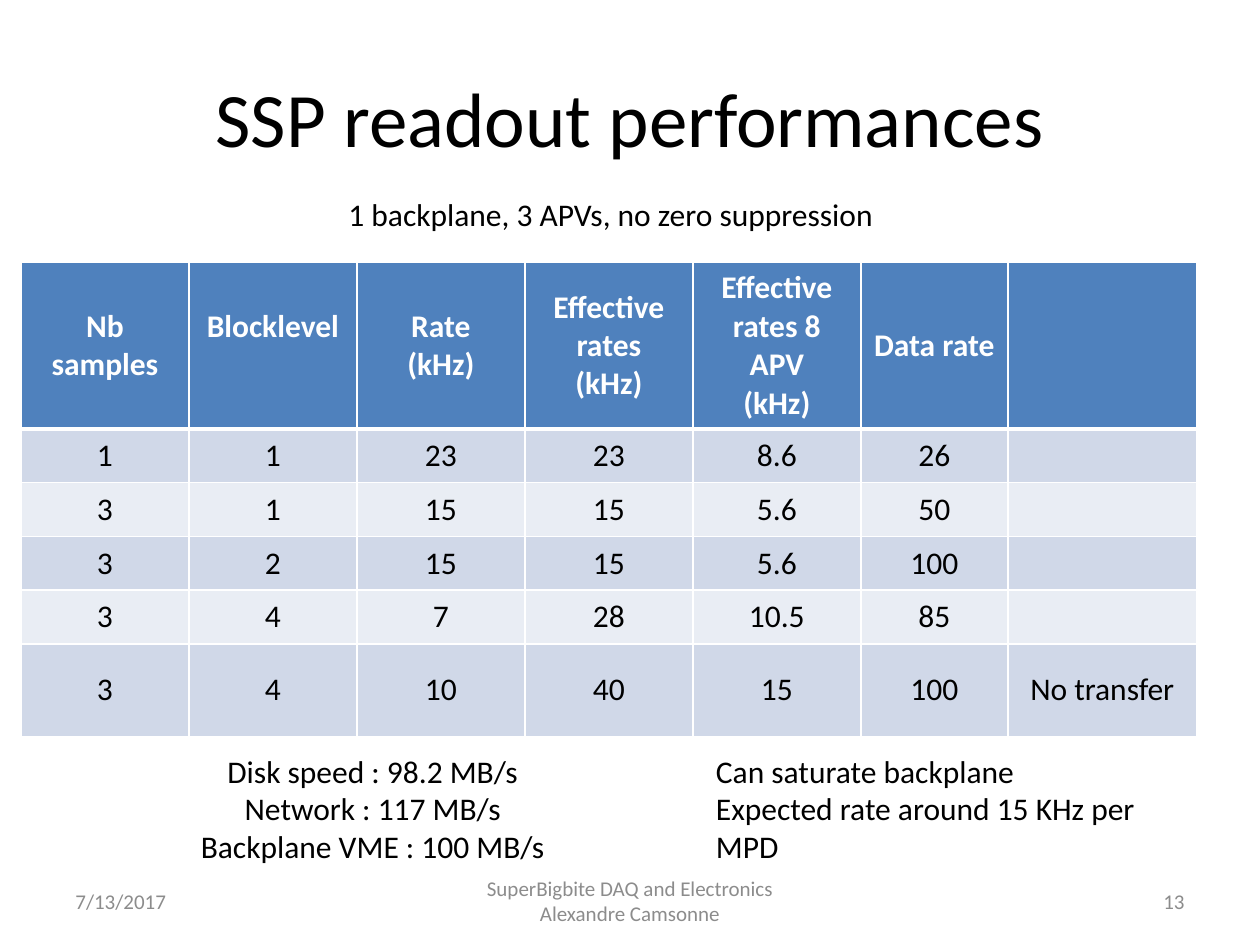
from lxml.etree import SubElement
from pptx import Presentation
from pptx.dml.color import RGBColor
from pptx.enum.text import MSO_ANCHOR, MSO_AUTO_SIZE, PP_ALIGN
from pptx.oxml.ns import qn
from pptx.util import Pt

FONT = "Calibri"
BLACK = RGBColor(0, 0, 0)
WHITE = RGBColor(255, 255, 255)
GRAY = RGBColor(0x8C, 0x8C, 0x8C)
BLUE = RGBColor(0x4F, 0x81, 0xBD)
BANDS = [RGBColor(0xD0, 0xD8, 0xE8), RGBColor(0xE9, 0xED, 0xF4)]
LEFT, CENTER, RIGHT = PP_ALIGN.LEFT, PP_ALIGN.CENTER, PP_ALIGN.RIGHT

# Content
TITLE = "SSP readout performances"
HEADER = ["Nb samples", "Blocklevel", "Rate\n(kHz)", "Effective rates\n(kHz)",
          "Effective rates 8 APV\n(kHz)", "Data rate", ""]
ROWS = [
    ["1", "1", "23", "23", "8.6", "26", ""],
    ["3", "1", "15", "15", "5.6", "50", ""],
    ["3", "2", "15", "15", "5.6", "100", ""],
    ["3", "4", "7", "28", "10.5", "85", ""],
    ["3", "4", "10", "40", "15", "100", "No transfer"],
]
COL_WIDTHS = [96] * 5 + [84, 108]
ROW_HEIGHTS = [75.6] + [30.7] * 4 + [53]
TABLE_LEFT, TABLE_TOP, TABLE_HEIGHT = 12, 150, 269.3

# Text, (left, top, width, height), alignment, wrap
NOTES = [
    ("1 backplane, 3 APVs, no zero suppression", (192, 108, 318, 29), LEFT, False),
    ("Disk speed : 98.2 MB/s\nNetwork : 117 MB/s\nBackplane VME : 100 MB/s",
     (96, 426, 234, 72.7), CENTER, True),
    ("Can saturate backplane\nExpected rate around 15 KHz per MPD",
     (402, 426, 276, 72.7), LEFT, True),
]
# Text, left, width, alignment
FOOTERS = [
    ("7/13/2017", 36, 168, LEFT),
    ("SuperBigbite DAQ and Electronics Alexandre Camsonne", 246, 228, CENTER),
    ("13", 516, 168, RIGHT),
]


def set_text(tf, text, size=18, color=BLACK, bold=False, align=LEFT):
    for i, line in enumerate(text.split("\n")):
        p = tf.add_paragraph() if i else tf.paragraphs[0]
        p.alignment = align
        r = p.add_run()
        r.text = line
        r.font.name, r.font.size, r.font.bold = FONT, Pt(size), bold
        r.font.color.rgb = color


def add_text(s, text, box, wrap=True, anchor=MSO_ANCHOR.TOP, grow=False, **fmt):
    tf = s.shapes.add_textbox(*map(Pt, box)).text_frame
    tf.word_wrap = wrap
    tf.vertical_anchor = anchor
    tf.auto_size = MSO_AUTO_SIZE.SHAPE_TO_FIT_TEXT if grow else MSO_AUTO_SIZE.NONE
    set_text(tf, text, **fmt)


def set_borders(cell, **widths):
    tcPr = cell._tc.get_or_add_tcPr()
    for side, width in widths.items():
        ln = SubElement(tcPr, qn(f"a:ln{side}"), w=str(Pt(width)))
        SubElement(SubElement(ln, qn("a:solidFill")), qn("a:srgbClr"), val=str(WHITE))


def add_rates_table(s):
    data = [HEADER] + ROWS
    frame = s.shapes.add_table(len(data), len(HEADER), Pt(TABLE_LEFT), Pt(TABLE_TOP),
                               Pt(sum(COL_WIDTHS)), Pt(TABLE_HEIGHT))
    table = frame.table
    for col, width in zip(table.columns, COL_WIDTHS):
        col.width = Pt(width)
    for row, height in zip(table.rows, ROW_HEIGHTS):
        row.height = Pt(height)
    frame.height = Pt(TABLE_HEIGHT)

    for i, values in enumerate(data):
        head = i == 0
        for j, text in enumerate(values):
            cell = table.cell(i, j)
            cell.vertical_anchor = MSO_ANCHOR.MIDDLE
            set_borders(cell, L=1, R=1, T=3 if i == 1 else 1, B=3 if head else 1)
            cell.fill.solid()
            cell.fill.fore_color.rgb = BLUE if head else BANDS[(i - 1) % 2]
            if text:
                set_text(cell.text_frame, text, color=WHITE if head else BLACK,
                         bold=head, align=CENTER)
    # Lift the one-line heading level with the first line of its neighbours
    table.cell(0, HEADER.index("Blocklevel")).margin_bottom = Pt(25.6)


def main():
    prs = Presentation()
    prs.slide_width, prs.slide_height = Pt(720), Pt(540)
    s = prs.slides.add_slide(prs.slide_layouts[5])

    # Title
    title = s.shapes.title
    title.left, title.top, title.width, title.height = map(Pt, (36, 21.6, 648, 90))
    title.text_frame.vertical_anchor = MSO_ANCHOR.MIDDLE
    set_text(title.text_frame, TITLE, size=44, align=CENTER)

    # Table
    add_rates_table(s)

    # Footer line
    for text, left, width, align in FOOTERS:
        add_text(s, text, (left, 500.5, width, 28.75), anchor=MSO_ANCHOR.MIDDLE,
                 size=12, color=GRAY, align=align)

    # Remarks above and below the table
    for text, box, align, wrap in NOTES:
        add_text(s, text, box, wrap=wrap, grow=True, align=align)

    prs.save("out.pptx")


if __name__ == "__main__":
    main()
